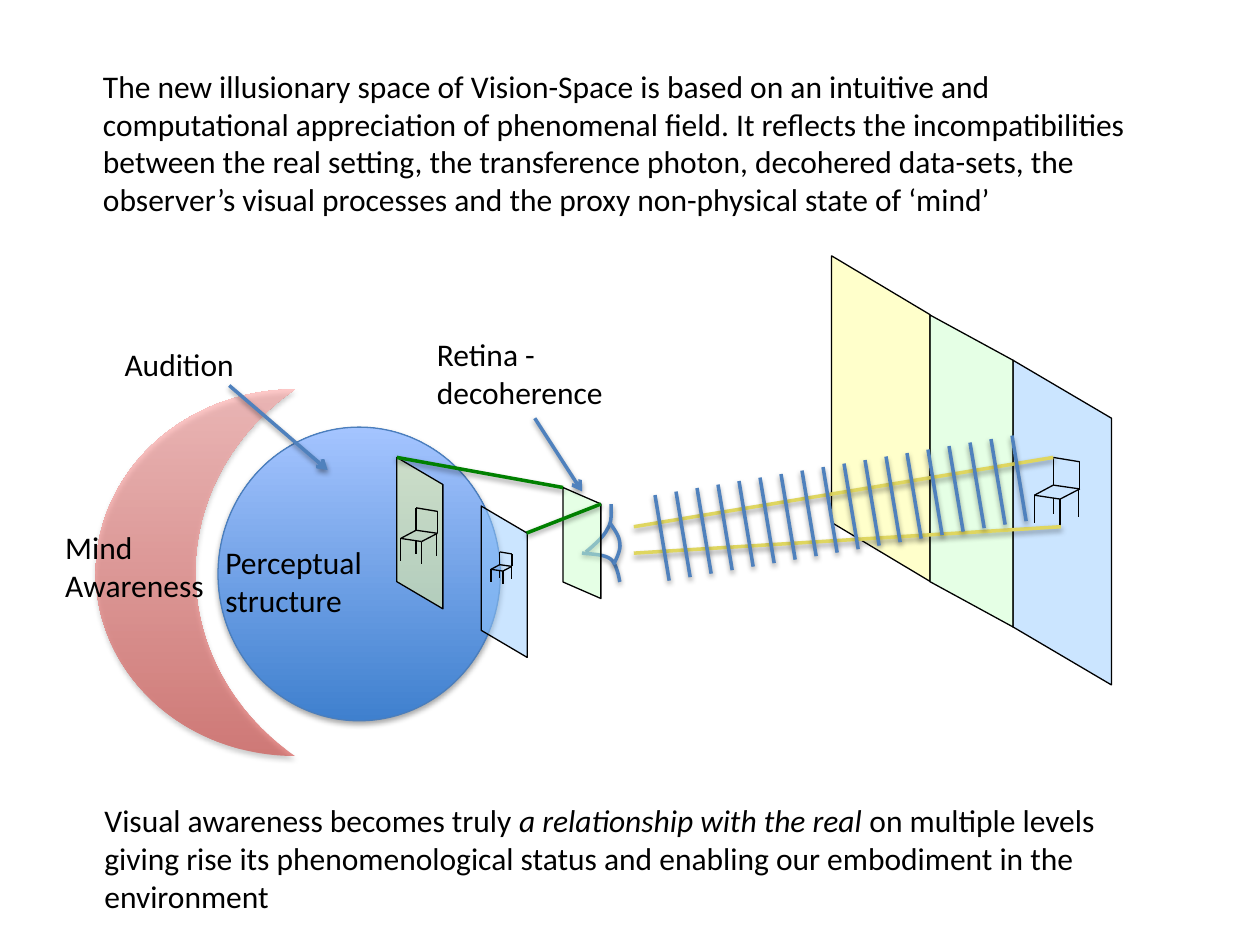
from lxml import etree
from pptx import Presentation
from pptx.dml.color import RGBColor
from pptx.enum import shapes
from pptx.oxml import ns
from pptx.util import Pt

BLACK = RGBColor(0x00, 0x00, 0x00)
BLUE = RGBColor(0x4F, 0x81, 0xBD)
GOLD = RGBColor(0xDF, 0xD6, 0x60)
GREEN = RGBColor(0x00, 0x80, 0x00)
PALE_YELLOW = RGBColor(0xFF, 0xFF, 0x99)
PALE_GREEN = RGBColor(0xCC, 0xFF, 0xCC)
PALE_BLUE = RGBColor(0x99, 0xCC, 0xFF)
MOON_DARK = RGBColor(0xD1, 0x40, 0x3C)
MOON_LIGHT = RGBColor(0xFF, 0xA6, 0xA5)
GLOBE_DARK = RGBColor(0x3F, 0x80, 0xCE)
GLOBE_LIGHT = RGBColor(0xA4, 0xC4, 0xFF)
GLOBE_EDGE = RGBColor(0x4B, 0x7E, 0xBC)


def set_effects(shape, shadow, distance=1.6, opacity=38):
    """Replace the theme's effects by a soft drop shadow, or by none."""
    effects = etree.SubElement(shape._element.spPr, ns.qn("a:effectLst"))
    if shadow:
        outer = etree.SubElement(
            effects, ns.qn("a:outerShdw"), blurRad=str(Pt(3.1)),
            dist=str(Pt(distance)), dir="5400000", rotWithShape="0")
        colour = etree.SubElement(outer, ns.qn("a:srgbClr"), val="000000")
        etree.SubElement(colour, ns.qn("a:alpha"), val=str(opacity * 1000))


def add_line(start, end, colour, width=2, shadow=True, arrow=False):
    line = page.shapes.add_connector(
        shapes.MSO_CONNECTOR.STRAIGHT, *[Pt(v) for v in (*start, *end)])
    line.line.color.rgb = colour
    line.line.width = Pt(width)
    if arrow:
        etree.SubElement(line.line._get_or_add_ln(), ns.qn("a:tailEnd"), type="arrow")
    set_effects(line, shadow)
    return line


deck = Presentation()
deck.slide_width, deck.slide_height = Pt(720), Pt(540)
page = deck.slides.add_slide(deck.slide_layouts[6])

# Mind (moon) and perceptual structure (globe)
bodies = [
    (shapes.MSO_SHAPE.MOON, (54.7, 222.5, 113.8, 209.5), MOON_DARK, MOON_LIGHT, None, 58),
    (shapes.MSO_SHAPE.OVAL, (124.6, 244.1, 161.3, 167.8), GLOBE_DARK, GLOBE_LIGHT, GLOBE_EDGE, 100),
]
for preset, place, dark, light, edge, opacity in bodies:
    body = page.shapes.add_shape(preset, *[Pt(v) for v in place])
    body.fill.gradient()
    body.fill.gradient_angle = 90
    for stop, position, colour in zip(body.fill.gradient_stops, (0, 1), (dark, light)):
        stop.position = position
        stop.color.rgb = colour
    if opacity < 100:
        for colour in body._element.spPr.xpath("./a:gradFill//a:srgbClr"):
            etree.SubElement(colour, ns.qn("a:alpha"), val=str(opacity * 1000))
    if edge:
        body.line.color.rgb = edge
        body.line.width = Pt(0.75)
    else:
        body.line.fill.background()
    set_effects(body, True, distance=1.8, opacity=35)

# Eye: chains of cubic Bezier segments, each sampled in short steps
eye_curves = [
    [(349.2, 288), (349.2, 293), (349.9, 298.1), (347, 302.4),
     (344.9, 307.4), (334.8, 315.4), (334.8, 315.4)],
    [(332.6, 316.1), (339.1, 316.8), (345.6, 316.8), (349.2, 319.7),
     (352.8, 322.6), (354.2, 332.6), (354.2, 332.6)],
    [(348.5, 298.8), (351.4, 303.1), (354.2, 306.7), (354.2, 311),
     (355, 314.6), (350.6, 322.6), (350.6, 322.6)],
]
STEPS = 12
for curve in eye_curves:
    outline = []
    for first in (0, 3):
        a, b, c, d = curve[first:first + 4]
        for step in range(1, STEPS + 1):
            t = step / STEPS
            weights = ((1 - t) ** 3, 3 * t * (1 - t) ** 2, 3 * t ** 2 * (1 - t), t ** 3)
            outline.append([Pt(sum(w * p[axis] for w, p in zip(weights, (a, b, c, d))))
                            for axis in (0, 1)])
    builder = page.shapes.build_freeform(Pt(curve[0][0]), Pt(curve[0][1]))
    builder.add_line_segments(outline, close=False)
    arc = builder.convert_to_shape()
    arc.fill.background()
    arc.line.color.rgb = BLUE
    arc.line.width = Pt(2)
    set_effects(arc, True)

# Panels: left, top, width, drop of the right side, height
panels = [
    (475.2, 146.2, 56.2, 33.6, 152.4, PALE_YELLOW),
    (578.9, 205.9, 56.2, 33.1, 152.4, PALE_BLUE),
    (531.4, 180, 47.5, 25.9, 152.4, PALE_GREEN),
    (226.8, 261.4, 26.3, 15.5, 71, PALE_YELLOW),
    (275, 289.2, 26.3, 15.5, 71, PALE_BLUE),
    (321.8, 278.6, 21.6, 9.4, 54, PALE_GREEN),
]
for left, top, width, drop, height, colour in panels:
    right = left + width
    corners = [(left, top), (right, top + drop),
               (right, top + drop + height), (left, top + height)]
    builder = page.shapes.build_freeform(Pt(left), Pt(top))
    builder.add_line_segments([(Pt(x), Pt(y)) for x, y in corners[1:]])
    panel = builder.convert_to_shape()
    panel.fill.solid()
    panel.fill.fore_color.rgb = colour
    for fill in panel._element.spPr.xpath("./a:solidFill/a:srgbClr"):
        etree.SubElement(fill, ns.qn("a:alpha"), val="50000")
    panel.line.color.rgb = BLACK
    panel.line.width = Pt(0.75)
    set_effects(panel, False)

# One chair at three sizes
back_left, back_right = (10.8, 0), (25.9, 2.5)
seat_left, seat_right = (10.8, 15.8), (25.9, 18)
front_left, front_right = (0, 21.6), (14.7, 23.8)
chair_strokes = [
    (back_left, back_right), (back_left, seat_left), (back_right, seat_right),
    (seat_left, seat_right), (seat_right, front_right), (seat_left, front_left),
    (front_left, front_right), (front_left, (0, 37.4)), (front_right, (14.7, 39.6)),
    ((25.4, 18), (25.4, 33.8)), ((10.8, 23), (10.8, 32.4)),
]
for left, top, scale in [(591.1, 261.4, 1), (280.6, 315.4, 0.46), (229, 290.2, 0.81)]:
    for stroke in chair_strokes:
        start, end = [(left + x * scale, top + y * scale) for x, y in stroke]
        add_line(start, end, BLACK, width=0.75, shadow=False)

# Light rays, wave fronts and the projection from retina to structure
add_line((601.9, 261.4), (362.2, 301), GOLD)
add_line((606.2, 301), (362.2, 316.1), GOLD)
for front in range(18):
    x, y = 374.3 + 12 * front, 282.9 - 2 * front
    add_line((x, y), (x + 8.1, y + 48.9), BLUE)
add_line((343.4, 288), (301, 304.6), GREEN)
add_line((321.8, 278.6), (226.8, 261.4), GREEN)

# Texts: place, paragraphs made of (words, italic) runs
texts = [
    ((121.7, 306.7, 182.2, 51.1), [[("Perceptual", False)], [("structure", False)]]),
    ((64.1, 193.7, 182.2, 28.8), [[("Audition", False)]]),
    ((30.2, 298.1, 182.2, 51.1), [[("Mind", False)], [("Awareness", False)]]),
    ((52.6, 454.3, 607, 72.7), [[
        ("Visual awareness becomes truly ", False),
        ("a relationship with the real ", True),
        ("on multiple levels giving rise its phenomenological status and "
         "enabling our embodiment in the environment", False)]]),
    ((51.8, 34.6, 612, 94.3), [[(
        "The new illusionary space of Vision-Space is based on an intuitive and "
        "computational appreciation of phenomenal field. It reflects the "
        "incompatibilities between the real setting, the transference photon, "
        "decohered data-sets, the observer’s visual processes and the proxy "
        "non-physical state of ‘mind’", False)]]),
    ((242.6, 187.9, 126, 51.1), [[("Retina - decoherence", False)]]),
]
for place, paragraphs in texts:
    box = page.shapes.add_textbox(*[Pt(v) for v in place])
    frame = box.text_frame
    frame.word_wrap = True
    for number, runs in enumerate(paragraphs):
        para = frame.add_paragraph() if number else frame.paragraphs[0]
        para.font.name = "Calibri"
        para.font.size = Pt(18)
        para.font.color.rgb = BLACK
        for words, italic in runs:
            span = para.add_run()
            span.text = words
            if italic:
                span.font.italic = True
retina_label = box

add_line((131, 220.3), (187.2, 268.6), BLUE, arrow=True)
retina_arrow = add_line((305.6, 239), (332.6, 280.8), BLUE, arrow=True)
retina_arrow.begin_connect(retina_label, 2)

deck.save("out.pptx")
